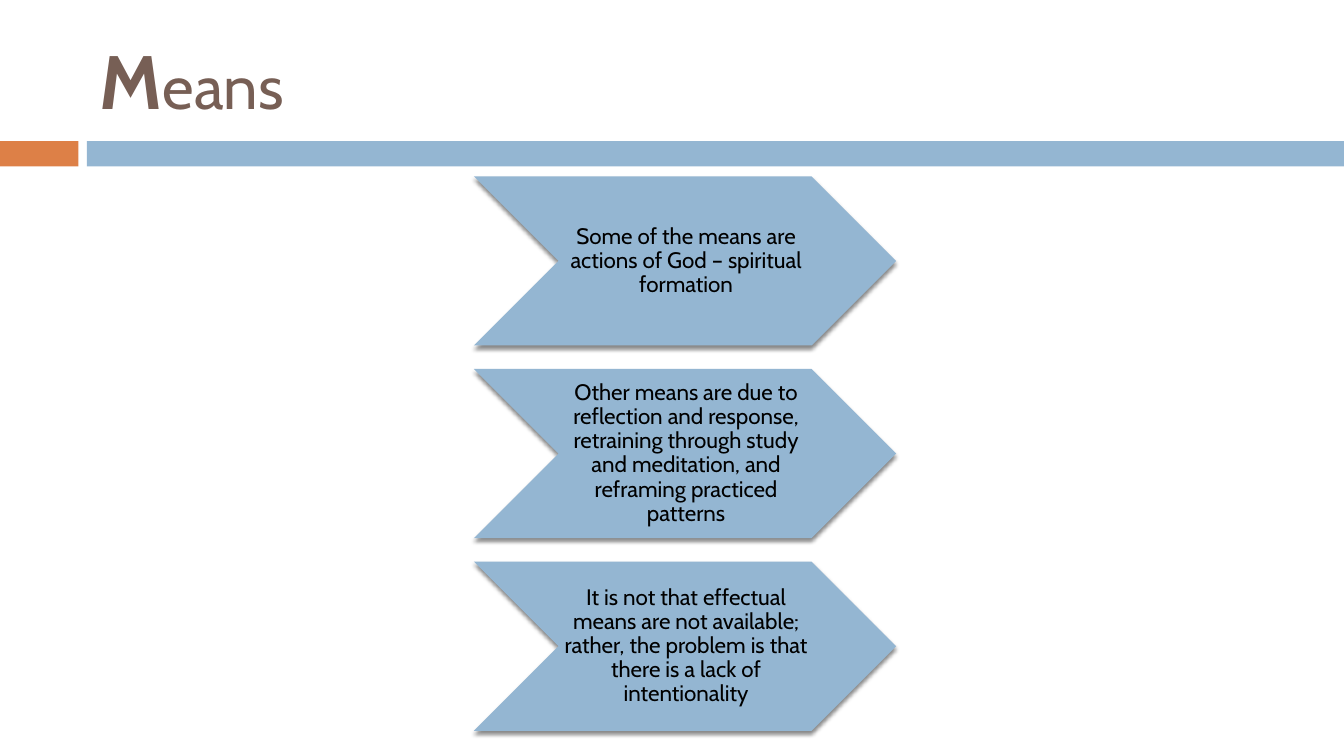
from lxml import etree
from pptx import Presentation
from pptx import util as u
from pptx.dml import color as col
from pptx.enum import shapes, text
from pptx.oxml import ns

Pt = u.Pt
FONT = "Cabin"
HUES = {"orange": "DD8047", "blue": "94B6D2", "brown": "775F55", "black": "000000"}


def add_run(para, words, hue, **style):
    run = para.add_run()
    run.text = words
    for key, value in {"name": FONT, **style}.items():
        setattr(run.font, key, value)
    run.font.color.rgb = col.RGBColor.from_string(HUES[hue])


def add_block(kind, box, hue):
    """Add a flat filled shape with no line or shadow."""
    block = slide.shapes.add_shape(kind, *map(Pt, box))
    block.shadow.inherit = False
    block.fill.solid()
    block.fill.fore_color.rgb = col.RGBColor.from_string(HUES[hue])
    block.line.fill.background()
    return block


deck = Presentation()
deck.slide_width, deck.slide_height = Pt(960), Pt(540)
slide = deck.slides.add_slide(deck.slide_layouts[5])

# Header bands
for left, width, hue in [(0, 56, "orange"), (62, 898, "blue")]:
    add_block(shapes.MSO_SHAPE.RECTANGLE, (left, 100.8, width, 18), hue)

# Title
title = slide.shapes.title
place = {"left": 64, "top": 18, "width": 856, "height": 77.8}
for key, value in place.items():
    setattr(title, key, Pt(value))
title.text_frame.vertical_anchor = text.MSO_ANCHOR.MIDDLE
head = title.text_frame.paragraphs[0]
head.alignment = text.PP_ALIGN.LEFT
add_run(head, "M", "brown", size=Pt(54), bold=True)
add_run(head, "eans", "brown", size=Pt(44), bold=False)

# Chevrons
means = [
    "Some of the means are actions of God – spiritual formation",
    "Other means are due to reflection and response, retraining through study "
    "and meditation, and reframing practiced patterns",
    "It is not that effectual means are not available; rather, the problem is "
    "that there is a lack of intentionality",
]
frame_style = {
    "word_wrap": True,
    "vertical_anchor": text.MSO_ANCHOR.MIDDLE,
    "margin_left": Pt(1.6),
    "margin_right": Pt(0),
    "margin_top": Pt(0.8),
    "margin_bottom": Pt(0.8),
}
para_style = {"alignment": text.PP_ALIGN.CENTER, "line_spacing": 0.9}
shade = {"blurRad": Pt(3), "dist": Pt(2.4), "dir": 90 * 60000, "rotWithShape": 0}

for row, words in enumerate(means):
    arrow = add_block(shapes.MSO_SHAPE.CHEVRON, (338.5, 126 + 137.6 * row, 301.6, 120.8), "blue")
    glow = arrow.element.spPr.find(ns.qn("a:effectLst"))
    outer = etree.SubElement(glow, ns.qn("a:outerShdw"), {k: str(v) for k, v in shade.items()})
    tint = etree.SubElement(outer, ns.qn("a:srgbClr"), val=HUES["black"])
    etree.SubElement(tint, ns.qn("a:alpha"), val="45000")

    frame = arrow.text_frame
    para = frame.paragraphs[0]
    for part, style in [(frame, frame_style), (para, para_style)]:
        for key, value in style.items():
            setattr(part, key, value)
    add_run(para, words, "black", size=Pt(16))

deck.save("out.pptx")
